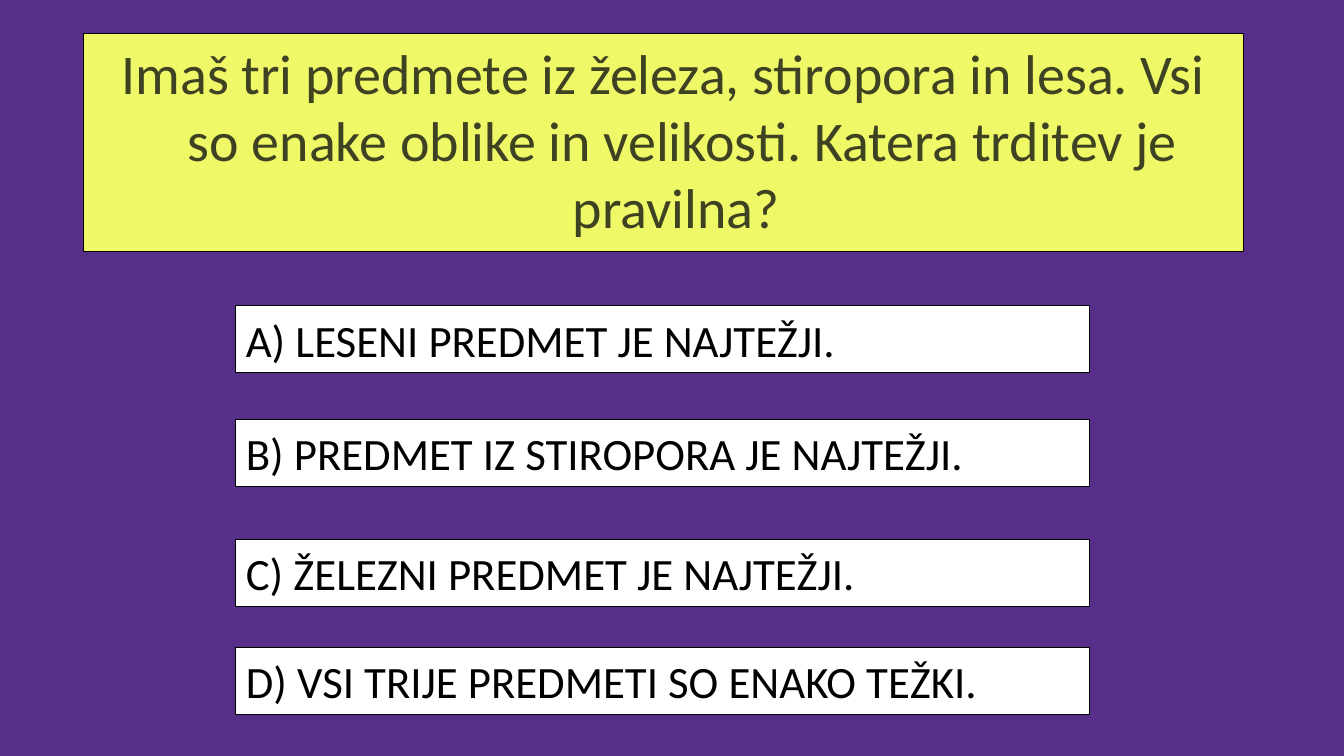
from dataclasses import dataclass

from pptx import Presentation
from pptx.dml.color import RGBColor
from pptx.enum.shapes import MSO_SHAPE as Shape
from pptx.enum.text import MSO_ANCHOR as Anchor, PP_ALIGN as Align
from pptx.util import Inches, Pt


@dataclass(frozen=True)
class Theme:
    font: str = "Calibri"
    background: str = "572E88"
    question_fill: str = "EFF967"
    question_text: str = "3E4223"
    answer_fill: str = "FFFFFF"
    black: str = "000000"
    question_size: int = 40
    answer_size: int = 32
    line_width: float = 0.75


THEME = Theme()
QUESTION = (
    "Imaš tri predmete iz železa, stiropora in lesa. "
    "Vsi so enake oblike in velikosti. Katera trditev je pravilna? "
)
ANSWERS = [
    (3.03, "A) LESENI PREDMET JE NAJTEŽJI."),
    (4.16, "B) PREDMET IZ STIROPORA JE NAJTEŽJI."),
    (5.35, "C) ŽELEZNI PREDMET JE NAJTEŽJI."),
    (6.42, "D) VSI TRIJE PREDMETI SO ENAKO TEŽKI."),
]


def rgb(value):
    return RGBColor.from_string(value)


def add_panel(s, kind, box, fill, text, size, color, align, anchor, wrap):
    sp = s.shapes.add_shape(kind, *(Inches(v) for v in box))
    sp.shadow.inherit = False
    sp.fill.solid()
    sp.fill.fore_color.rgb = rgb(fill)
    sp.line.color.rgb = rgb(THEME.black)
    sp.line.width = Pt(THEME.line_width)
    tf = sp.text_frame
    tf.word_wrap = wrap
    tf.vertical_anchor = anchor
    p = tf.paragraphs[0]
    p.text = text
    p.alignment = align
    p.font.name = THEME.font
    p.font.size = Pt(size)
    p.font.color.rgb = rgb(color)
    return p


def add_question(s, box):
    p = add_panel(s, Shape.RECTANGLE, box, THEME.question_fill, QUESTION,
                  THEME.question_size, THEME.question_text,
                  Align.CENTER, Anchor.TOP, True)
    pPr = p._p.get_or_add_pPr()
    pPr.set("marL", str(Inches(0.38)))
    pPr.set("indent", str(Inches(-0.38)))


def add_answers(s, left, width, height):
    for top, text in ANSWERS:
        add_panel(s, Shape.ACTION_BUTTON_CUSTOM, (left, top, width, height),
                  THEME.answer_fill, text, THEME.answer_size, THEME.black,
                  Align.LEFT, Anchor.MIDDLE, False)


def main():
    prs = Presentation()
    prs.slide_width = Inches(13.33)
    prs.slide_height = Inches(7.5)
    s = prs.slides.add_slide(prs.slide_layouts[6])
    s.background.fill.solid()
    s.background.fill.fore_color.rgb = rgb(THEME.background)
    add_question(s, (0.83, 0.33, 11.5, 2.17))
    add_answers(s, left=2.34, width=8.47, height=0.67)
    prs.save("out.pptx")


if __name__ == "__main__":
    main()
